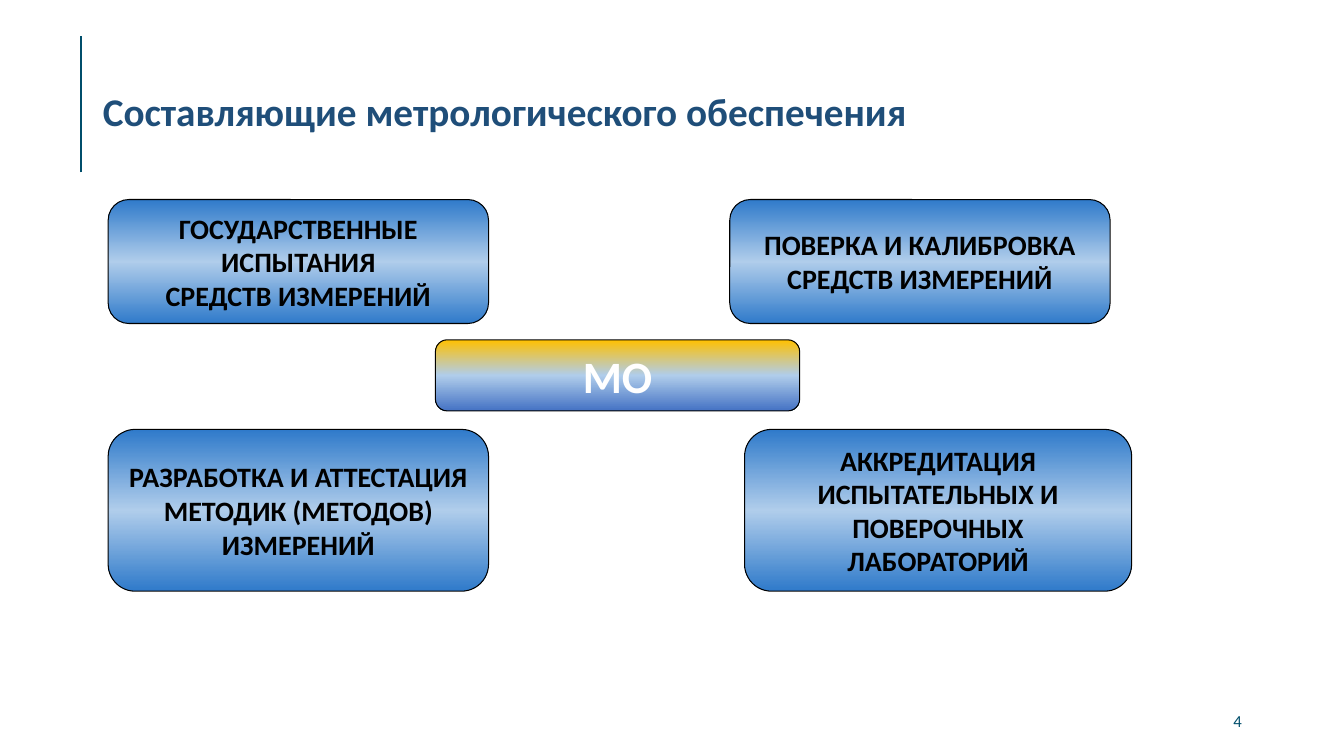
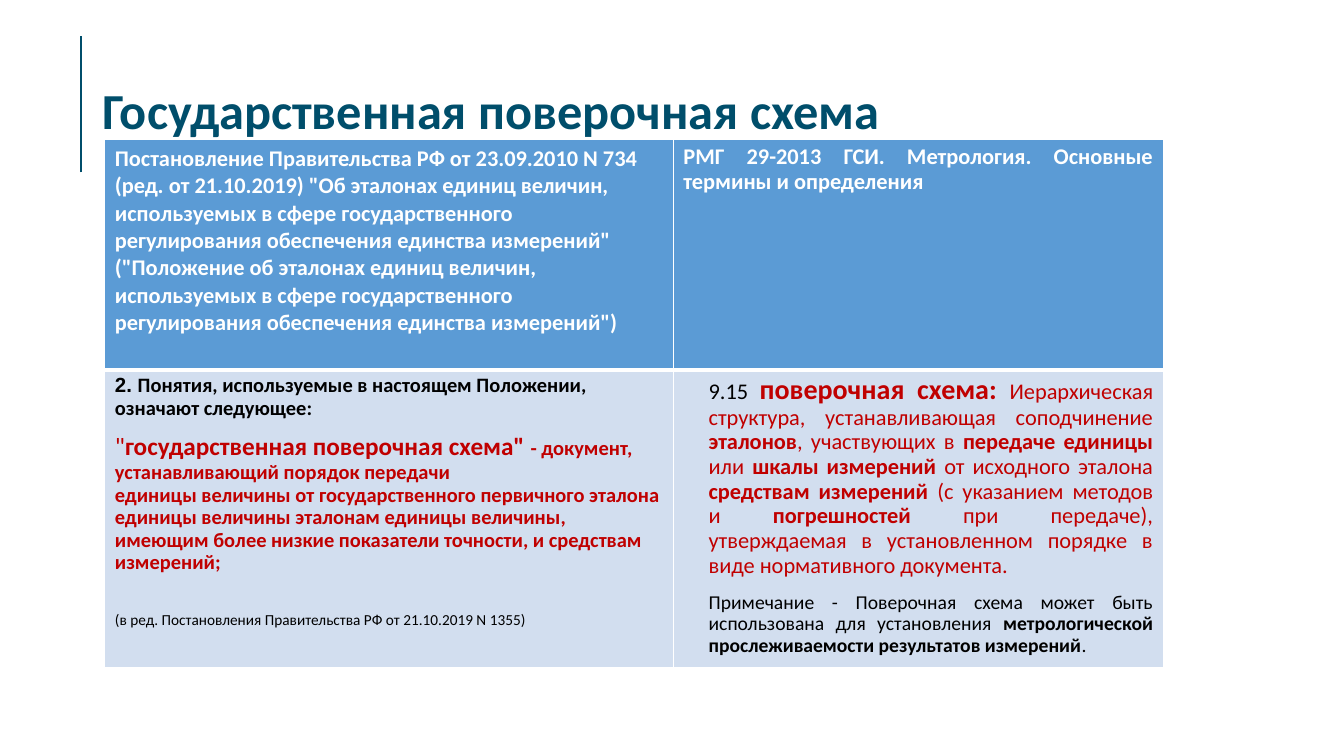
from dataclasses import dataclass

from lxml import etree
from pptx import Presentation
from pptx import util as u
from pptx.dml.color import RGBColor
from pptx.enum import shapes, text
from pptx.oxml.ns import qn

ALIGN = text.PP_ALIGN


@dataclass(frozen=True)
class Theme:
    font: str = "Calibri"
    number_font: str = "Arial"
    teal: str = "004E6B"
    navy: str = "1F4E79"
    black: str = "000000"
    white: str = "FFFFFF"
    red: str = "C00000"
    header: str = "5B9BD5"
    body: str = "D2DEEF"
    blue_gradient: tuple[str, ...] = ("2F7ACA", "B0CDEB", "2F7ACA")
    gold_gradient: tuple[str, ...] = ("FFC000", "B0CDEB", "4472C4")
    title: float = 28
    large_title: float = 36
    centre: float = 32
    box: float = 20
    term: float = 18
    text: float = 16
    clause: float = 14.6
    note: float = 14
    footer: float = 12
    small: float = 10.9


THEME = Theme()
WIDTH, HEIGHT = u.Inches(13.33), u.Inches(7.5)


def columns(count: float) -> int:
    """Length of grid columns, 100 to the slide's width."""
    return round(WIDTH * count / 100)


def rows(count: float) -> int:
    """Length of grid rows, 100 to the slide's height."""
    return round(HEIGHT * count / 100)


@dataclass(frozen=True)
class Area:
    left: float
    top: float
    width: float
    height: float

    def lengths(self) -> tuple[int, int, int, int]:
        return columns(self.left), rows(self.top), columns(self.width), rows(self.height)


@dataclass(frozen=True)
class Box:
    area: Area
    lines: tuple[str, ...]
    gradient: tuple[str, ...] = THEME.blue_gradient
    size: float = THEME.box
    color: str = THEME.black


@dataclass(frozen=True)
class Span:
    text: str
    size: float = THEME.text
    color: str = THEME.black
    bold: bool = False
    font: str = THEME.font


@dataclass(frozen=True)
class Block:
    spans: tuple[Span, ...]
    align: ALIGN = ALIGN.LEFT
    spacing: float = 0.9
    before: float = 0
    indent: float = 0


@dataclass(frozen=True)
class Cell:
    blocks: tuple[Block, ...]
    fill: str
    bottom_border: float = 1


TITLE = Area(6.9, 5.33, 86.25, 19.33)
PAGE_NUMBER = Area(70.65, 92.67, 22.5, 5.33)
RULE_LEFT, RULE_TOP, RULE_BOTTOM = 6.05, 4.8, 22.8
TABLE_LEFT, TABLE_TOP = 7.8, 18.5
TABLE_COLUMNS, TABLE_ROWS = (42.3, 36.45), (30.4, 39.4)

BOXES = (
    Box(Area(54.3, 26.4, 28.3, 16.4), ("ПОВЕРКА И КАЛИБРОВКА СРЕДСТВ ИЗМЕРЕНИЙ",)),
    Box(Area(8.05, 56.8, 28.3, 21.4),
        ("РАЗРАБОТКА И АТТЕСТАЦИЯ", "МЕТОДИК (МЕТОДОВ)", "ИЗМЕРЕНИЙ")),
    Box(Area(55.4, 56.8, 28.8, 21.4),
        ("АККРЕДИТАЦИЯ ИСПЫТАТЕЛЬНЫХ И ПОВЕРОЧНЫХ ЛАБОРАТОРИЙ",)),
    Box(Area(8.05, 26.4, 28.3, 16.4),
        ("ГОСУДАРСТВЕННЫЕ ИСПЫТАНИЯ", "СРЕДСТВ ИЗМЕРЕНИЙ")),
    Box(Area(32.4, 44.95, 27.1, 9.4), ("МО",),
        THEME.gold_gradient, THEME.centre, THEME.white),
)


def heading(content: str) -> Span:
    return Span(content, color=THEME.white, bold=True)


def red(content: str, size: float = THEME.text, bold: bool = False) -> Span:
    return Span(content, size, THEME.red, bold)


DECREE = Cell((
    Block((heading("Постановление Правительства РФ от 23.09.2010 N 734"),), spacing=1),
    Block((heading(
        '(ред. от 21.10.2019) "Об эталонах единиц величин, используемых в сфере '
        'государственного регулирования обеспечения единства измерений" '
        '("Положение об эталонах единиц величин, используемых в сфере '
        'государственного регулирования обеспечения единства измерений")'),), spacing=1),
), THEME.header, 3)

TERMS = Cell((
    Block((heading("РМГ 29-2013 ГСИ. Метрология. Основные термины и определения"),),
          ALIGN.JUSTIFY),
), THEME.header, 3)

DECREE_DEFINITION = Cell((
    Block((
        Span("2. ", THEME.clause, bold=True, font=THEME.number_font),
        Span("Понятия, используемые в настоящем Положении, означают следующее:",
             THEME.clause, bold=True),
    )),
    Block((
        red('"', THEME.term),
        red('государственная поверочная схема" ', THEME.term, True),
        red("- документ, устанавливающий порядок передачи\n"
            "единицы величины от государственного первичного эталона единицы величины "
            "эталонам единицы величины, имеющим более низкие показатели точности, "
            "и средствам измерений;", THEME.clause, True),
    ), before=10),
    Block((Span("(в ред. Постановления Правительства РФ от 21.10.2019 N 1355)",
                THEME.small),), before=27),
), THEME.body)

TERMS_DEFINITION = Cell((
    Block((
        Span("9.15 "),
        red("поверочная схема: ", THEME.box, True),
        red("Иерархическая структура, устанавливающая соподчинение "),
        red("эталонов", bold=True),
        red(", участвующих в "),
        red("передаче единицы", bold=True),
        red(" или "),
        red("шкалы измерений", bold=True),
        red(" от исходного эталона "),
        red("средствам измерений", bold=True),
        red(" (с указанием методов и "),
        red("погрешностей", bold=True),
        red(" при передаче), утверждаемая в установленном порядке в виде "
            "нормативного документа."),
    ), ALIGN.JUSTIFY, indent=0.25),
    Block((
        Span("Примечание - Поверочная схема может быть использована для установления ",
             THEME.note),
        Span("метрологической прослеживаемости результатов измерений", THEME.note, bold=True),
        Span(".", THEME.note),
    ), ALIGN.JUSTIFY, before=10, indent=0.25),
), THEME.body)

TABLE = ((DECREE, TERMS), (DECREE_DEFINITION, TERMS_DEFINITION))


def format_font(font, span: Span) -> None:
    font.name, font.size, font.bold = span.font, u.Pt(span.size), span.bold
    font.color.rgb = RGBColor.from_string(span.color)


def write_blocks(frame, blocks: tuple[Block, ...]) -> None:
    frame.word_wrap = True
    for index, block in enumerate(blocks):
        paragraph = frame.paragraphs[0] if index == 0 else frame.add_paragraph()
        paragraph.alignment = block.align
        paragraph.line_spacing = block.spacing
        paragraph.space_before = u.Pt(block.before)
        if block.indent:
            properties = paragraph._p.get_or_add_pPr()
            properties.set("marL", str(u.Inches(block.indent)))
            properties.set("indent", "0")
        uniform = len(block.spans) == 1
        if uniform:
            format_font(paragraph.font, block.spans[0])
        for span in block.spans:
            for line_index, line in enumerate(span.text.split("\n")):
                if line_index:
                    paragraph.add_line_break()
                run = paragraph.add_run()
                run.text = line
                if not uniform:
                    format_font(run.font, span)


def add_titled_slide(presentation, title: str, size: float, color: str):
    slide = presentation.slides.add_slide(presentation.slide_layouts.get_by_name("Title Only"))
    rule = slide.shapes.add_connector(
        shapes.MSO_CONNECTOR.STRAIGHT, columns(RULE_LEFT), rows(RULE_BOTTOM),
        columns(RULE_LEFT), rows(RULE_TOP))
    rule.line.color.rgb = RGBColor.from_string(THEME.teal)
    rule.line.width = u.Pt(1.65)
    etree.SubElement(rule.element.spPr, qn("a:effectLst"))

    shape = slide.shapes.title
    shape.left, shape.top, shape.width, shape.height = TITLE.lengths()
    frame = shape.text_frame
    frame.auto_size = text.MSO_AUTO_SIZE.NONE
    frame.vertical_anchor = text.MSO_ANCHOR.MIDDLE
    write_blocks(frame, (Block((Span(title, size, color, True),)),))
    return slide


def fill_gradient(shape, colors: tuple[str, ...]) -> None:
    """Fill from top to bottom with evenly spaced colours."""
    shape.fill.gradient()
    shape.fill.gradient_angle = 270
    stops = shape.element.spPr.find(qn("a:gradFill")).find(qn("a:gsLst"))
    for stop in list(stops):
        stops.remove(stop)
    for index, color in enumerate(colors):
        position = round(100000 * index / (len(colors) - 1))
        stop = etree.SubElement(stops, qn("a:gs"), pos=str(position))
        etree.SubElement(stop, qn("a:srgbClr"), val=color)


def add_box(slide, box: Box) -> None:
    shape = slide.shapes.add_shape(
        shapes.MSO_SHAPE.ROUNDED_RECTANGLE, *box.area.lengths())
    shape.shadow.inherit = False
    fill_gradient(shape, box.gradient)
    shape.line.color.rgb = RGBColor.from_string(THEME.black)
    shape.line.width = u.Pt(0.75)
    shape.text_frame.vertical_anchor = text.MSO_ANCHOR.MIDDLE
    write_blocks(shape.text_frame, tuple(
        Block((Span(line, box.size, box.color, True),), ALIGN.CENTER, 1)
        for line in box.lines))


def add_page_number(slide, number: int) -> None:
    frame = slide.shapes.add_textbox(*PAGE_NUMBER.lengths()).text_frame
    frame.vertical_anchor = text.MSO_ANCHOR.MIDDLE
    span = Span(str(number), THEME.footer, THEME.teal)
    write_blocks(frame, (Block((span,), ALIGN.RIGHT, 1),))


def draw_borders(cell, widths: dict[str, float]) -> None:
    properties = cell._tc.get_or_add_tcPr()
    for index, (side, width) in enumerate(widths.items()):
        border = etree.Element(qn(f"a:{side}"), w=str(u.Pt(width)))
        fill = etree.SubElement(border, qn("a:solidFill"))
        etree.SubElement(fill, qn("a:srgbClr"), val=THEME.white)
        properties.insert(index, border)


def add_definitions_table(slide) -> None:
    area = Area(TABLE_LEFT, TABLE_TOP, sum(TABLE_COLUMNS), sum(TABLE_ROWS))
    table = slide.shapes.add_table(
        len(TABLE_ROWS), len(TABLE_COLUMNS), *area.lengths()).table
    for column, width in zip(table.columns, TABLE_COLUMNS):
        column.width = columns(width)
    for row, height, contents in zip(table.rows, TABLE_ROWS, TABLE):
        row.height = rows(height)
        for cell, content in zip(row.cells, contents):
            cell.fill.solid()
            cell.fill.fore_color.rgb = RGBColor.from_string(content.fill)
            top_border = 1 if content.fill == THEME.header else 3
            draw_borders(cell, {"lnL": 1, "lnR": 1, "lnT": top_border,
                                "lnB": content.bottom_border})
            write_blocks(cell.text_frame, content.blocks)


def main() -> None:
    presentation = Presentation()
    presentation.slide_width, presentation.slide_height = WIDTH, HEIGHT

    components = add_titled_slide(
        presentation, "Составляющие метрологического обеспечения", THEME.title, THEME.navy)
    for box in BOXES:
        add_box(components, box)
    add_page_number(components, 4)

    scheme = add_titled_slide(
        presentation, "Государственная поверочная схема", THEME.large_title, THEME.teal)
    add_definitions_table(scheme)
    presentation.save("out.pptx")


if __name__ == "__main__":
    main()
